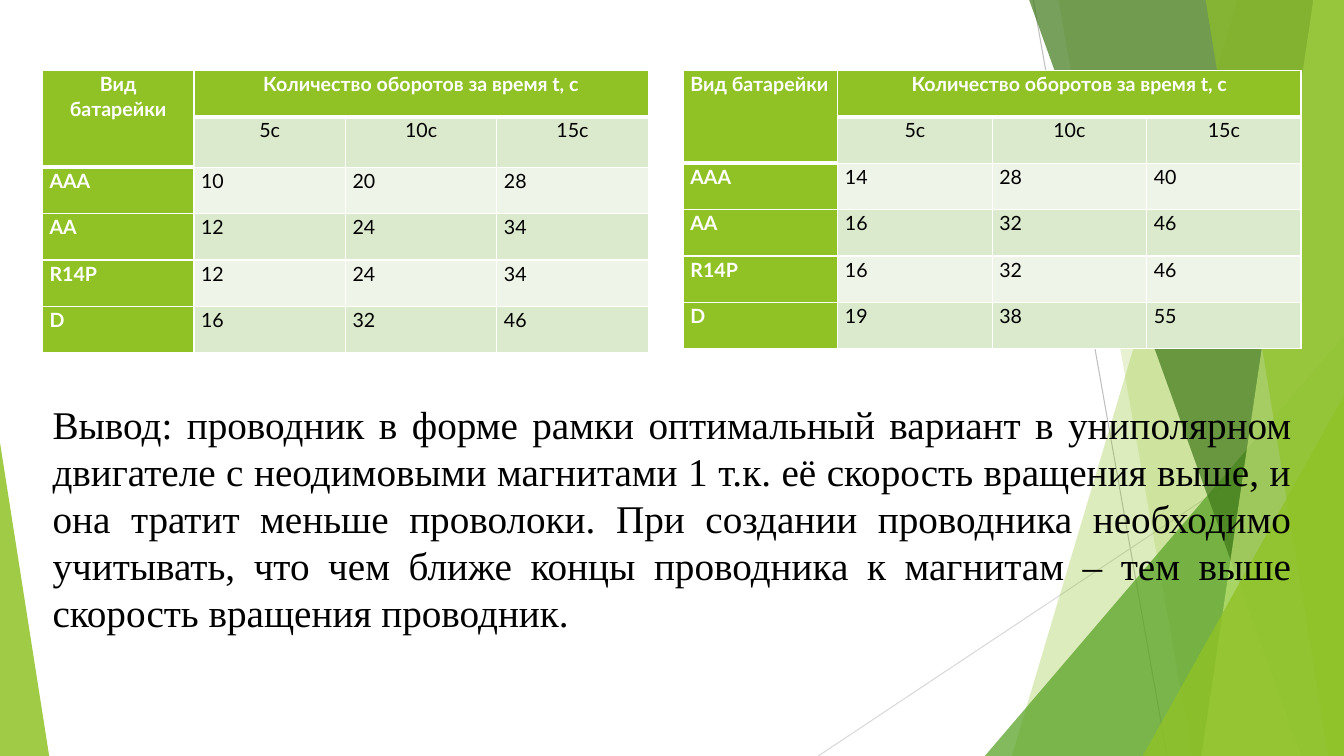
from lxml import etree
from pptx import Presentation
from pptx.dml.color import RGBColor
from pptx.enum.shapes import MSO_CONNECTOR, MSO_SHAPE
from pptx.enum.text import MSO_ANCHOR, MSO_AUTO_SIZE, PP_ALIGN
from pptx.oxml.ns import qn
from pptx.util import Cm, Pt

WHITE = RGBColor(0xFF, 0xFF, 0xFF)
BLACK = RGBColor(0x00, 0x00, 0x00)
LIME = RGBColor(0x90, 0xC2, 0x26)
GREEN = RGBColor(0x54, 0xA0, 0x21)
DARK_GREEN = RGBColor(0x3F, 0x78, 0x19)
PALE_LIME = RGBColor(0xC0, 0xE4, 0x74)
BAND_DARK = RGBColor(0xDB, 0xE9, 0xCD)
BAND_LIGHT = RGBColor(0xEE, 0xF4, 0xE8)
GREY = RGBColor(0xBF, 0xBF, 0xBF)
LIGHT_GREY = RGBColor(0xD9, 0xD9, 0xD9)
WIDTH, HEIGHT = 33.87, 19.05

presentation = Presentation()
presentation.slide_width = Cm(WIDTH)
presentation.slide_height = Cm(HEIGHT)
slide = presentation.slides.add_slide(presentation.slide_layouts[1])
title = slide.shapes.title
title._element.getparent().remove(title._element)


def paint(shape, color, opacity):
    shape.shadow.inherit = False
    shape.fill.solid()
    shape.fill.fore_color.rgb = color
    shape.line.fill.background()
    color_element = shape._element.spPr.find(qn("a:solidFill"))[0]
    etree.SubElement(color_element, qn("a:alpha"), val=str(opacity * 1000))


def format_cell(cell, color, top, bottom):
    cell.margin_left = cell.margin_right = Cm(0.18)
    cell.margin_top = cell.margin_bottom = 0
    cell.fill.solid()
    cell.fill.fore_color.rgb = color
    properties = cell._tc.get_or_add_tcPr()
    borders = [("a:lnL", 1), ("a:lnR", 1), ("a:lnT", top), ("a:lnB", bottom)]
    for index, (tag, points) in enumerate(borders):
        border = etree.Element(qn(tag), w=str(Pt(points)))
        fill = etree.SubElement(border, qn("a:solidFill"))
        etree.SubElement(fill, qn("a:srgbClr"), val=str(WHITE))
        properties.insert(index, border)


# Thin lines behind the facets
for x1, y1, x2, y2, color in [
    (26.04, 0, 29.41, HEIGHT, GREY),
    (WIDTH, 10.24, 20.62, HEIGHT, LIGHT_GREY),
]:
    line = slide.shapes.add_connector(
        MSO_CONNECTOR.STRAIGHT, Cm(x1), Cm(y1), Cm(x2), Cm(y2))
    line.line.color.rgb = color
    line.line.width = Pt(0.75)
    etree.SubElement(line._element.spPr, qn("a:effectLst"))

# Facets on the right edge: bands run from top x to bottom x, triangles from left, top
for kind, first, second, color, opacity in [
    ("band", 31.19, 25.5, LIME, 30),
    ("band", 26.67, 30.05, LIME, 20),
    ("triangle", 24.82, 8.46, GREEN, 72),
    ("band", 25.93, 32.79, DARK_GREEN, 70),
    ("band", 33.1, 30.28, PALE_LIME, 70),
    ("band", 30.38, 33.48, LIME, 65),
    ("triangle", 28.8, 9.98, LIME, 80),
]:
    if kind == "band":
        builder = slide.shapes.build_freeform(Cm(first), Cm(-0.02))
        builder.add_line_segments([
            (Cm(WIDTH), Cm(-0.02)), (Cm(WIDTH), Cm(HEIGHT)), (Cm(second), Cm(HEIGHT))])
        facet = builder.convert_to_shape()
    else:
        facet = slide.shapes.add_shape(
            MSO_SHAPE.ISOSCELES_TRIANGLE, Cm(first), Cm(second),
            Cm(WIDTH - first), Cm(HEIGHT - second))
        facet.adjustments[0] = 1
    paint(facet, color, opacity)

# Wedge in the lower left corner
wedge = slide.shapes.add_shape(
    MSO_SHAPE.ISOSCELES_TRIANGLE, 0, Cm(11.15), Cm(1.24), Cm(7.9))
wedge.adjustments[0] = 0
paint(wedge, LIME, 85)

# Conclusion, brought in front of the facets
conclusion = slide.placeholders[1]
conclusion.left, conclusion.top = Cm(1.07), Cm(9.96)
conclusion.width, conclusion.height = Cm(31.72), Cm(7.01)
slide.shapes._spTree.append(conclusion._element)
frame = conclusion.text_frame
frame.word_wrap = True
frame.auto_size = MSO_AUTO_SIZE.NONE
frame.vertical_anchor = MSO_ANCHOR.TOP
paragraph = frame.paragraphs[0]
paragraph.alignment = PP_ALIGN.JUSTIFY
paragraph.space_before = Pt(10)
paragraph_properties = paragraph._p.get_or_add_pPr()
paragraph_properties.set("marL", "0")
paragraph_properties.set("indent", "0")
etree.SubElement(paragraph_properties, qn("a:buNone"))
run = paragraph.add_run()
run.text = (
    "Вывод: проводник в форме рамки оптимальный вариант в униполярном двигателе "
    "с неодимовыми магнитами 1 т.к. её скорость вращения выше, и она тратит меньше "
    "проволоки. При создании проводника необходимо учитывать, что чем ближе концы "
    "проводника к магнитам – тем выше скорость вращения проводник.")
run.font.size = Pt(28)
run.font.name = "Times New Roman"
run.font.color.rgb = BLACK

# Tables of revolutions by battery type
HEADER = [["Вид батарейки", "Количество оборотов за время t, с", "", ""],
          ["", "5с", "10с", "15с"]]
BATTERIES = ["ААА", "АА", "R14P", "D"]
for left, width, corner_alignment, counts in [
    (1.07, 15.27, PP_ALIGN.CENTER,
     [(10, 20, 28), (12, 24, 34), (12, 24, 34), (16, 32, 46)]),
    (17.22, 15.57, PP_ALIGN.JUSTIFY,
     [(14, 28, 40), (16, 32, 46), (16, 32, 46), (19, 38, 55)]),
]:
    rows = HEADER + [[name, *values] for name, values in zip(BATTERIES, counts)]
    table = slide.shapes.add_table(
        len(rows), 4, Cm(left), Cm(1.78), Cm(width), Cm(7.01)).table
    table.cell(0, 0).merge(table.cell(1, 0))
    table.cell(0, 1).merge(table.cell(0, 3))
    for row, texts in enumerate(rows):
        for column, text in enumerate(texts):
            cell = table.cell(row, column)
            is_heading = row == 0 or column == 0
            band = BAND_DARK if row % 2 else BAND_LIGHT
            header_end = 1 if column == 0 else 0
            format_cell(cell, LIME if is_heading else band,
                        top=3 if row == header_end + 1 else 1,
                        bottom=3 if row <= header_end else 1)
            if not text:
                continue
            paragraph = cell.text_frame.paragraphs[0]
            paragraph.alignment = PP_ALIGN.CENTER if row < 2 else PP_ALIGN.JUSTIFY
            paragraph.line_spacing = 1.07
            paragraph.space_after = Pt(8)
            run = paragraph.add_run()
            run.text = str(text)
            run.font.size = Pt(14)
            run.font.name = "Lato"
            run.font.bold = is_heading
            run.font.color.rgb = WHITE if is_heading else BLACK
    table.cell(0, 0).text_frame.paragraphs[0].alignment = corner_alignment

presentation.save("out.pptx")
